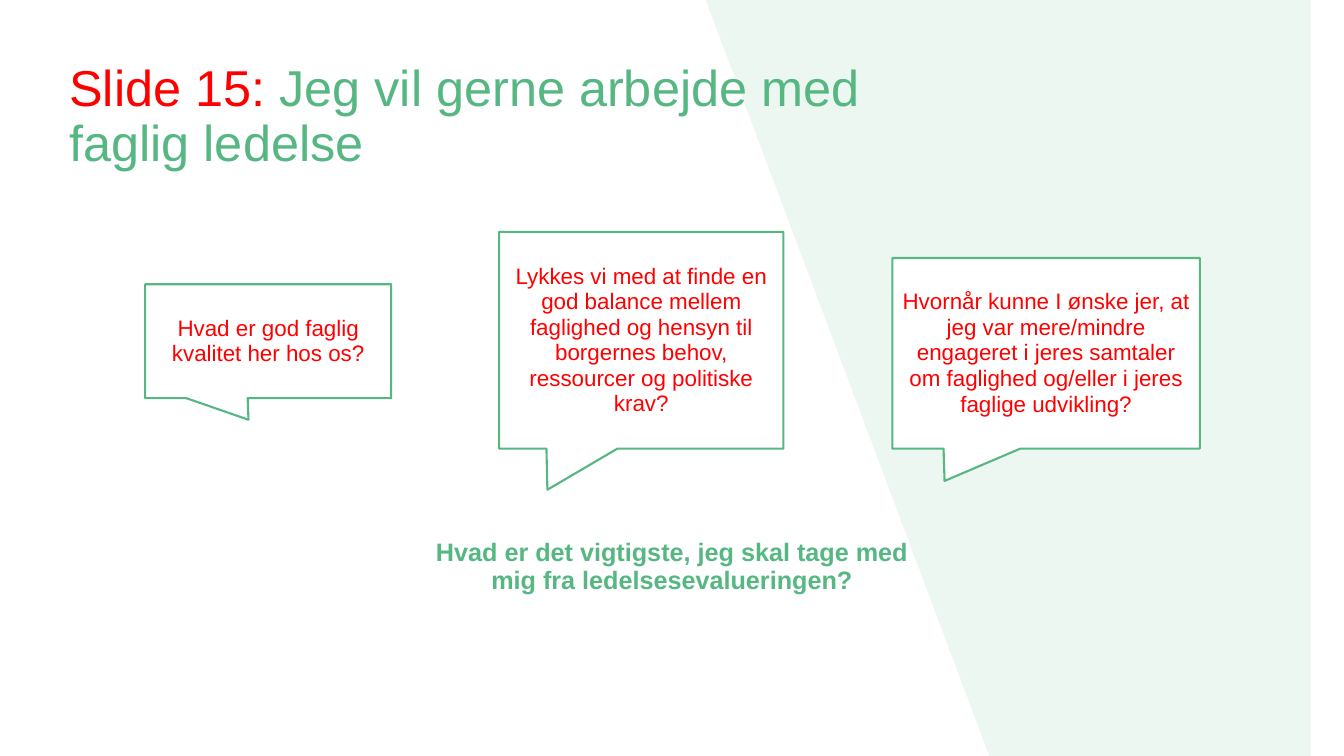
from lxml import etree
from pptx import Presentation
from pptx import util as u
from pptx.dml.color import RGBColor
from pptx.enum import shapes, text
from pptx.oxml.ns import qn

COLORS = {"green": "56B783", "red": "FF0000", "white": "FFFFFF"}
FONT = "Arial"
WIDTH, HEIGHT = 13.33, 7.5

TITLE = [("Slide 15:", "red"), (" Jeg vil gerne arbejde med faglig ledelse", "green")]
TITLE_BOX = (0.59, 0.58, 8.74, 1.11)
CLOSING = [("Hvad er det vigtigste, jeg skal tage med mig fra ledelsesevalueringen?", "green")]
CLOSING_BOX = (4.2, 5.29, 4.93, 0.68)
# Question, box, and tip offset from the box centre as shares of its size
CALLOUTS = [
    ("Hvad er god faglig kvalitet her hos os?",
     (1.44, 2.82, 2.44, 1.13), (-0.08, 0.69)),
    ("Hvornår kunne I ønske jer, at jeg var mere/mindre engageret i jeres samtaler "
     "om faglighed og/eller i jeres faglige udvikling?",
     (8.85, 2.56, 3.05, 1.89), (-0.33, 0.67)),
    ("Lykkes vi med at finde en god balance mellem faglighed og hensyn til "
     "borgernes behov, ressourcer og politiske krav?",
     (4.95, 2.3, 2.82, 2.15), (-0.33, 0.69)),
]
PANEL = [(7.22, 0), (10.08, HEIGHT), (WIDTH, HEIGHT), (WIDTH, 0)]
PANEL_OPACITY = 10


def color(name):
    return RGBColor.from_string(COLORS[name])


def inches(box):
    return [u.Inches(length) for length in box]


def write(shape, runs, size, spacing, align, anchor, bold=False):
    frame = shape.text_frame
    frame.word_wrap = True
    frame.vertical_anchor = anchor
    paragraph = frame.paragraphs[0]
    paragraph.alignment = align
    paragraph.line_spacing = spacing
    paragraph.font.name = FONT
    paragraph.font.size = u.Pt(size)
    paragraph.font.bold = bold
    for words, name in runs:
        run = paragraph.add_run()
        run.text = words
        run.font.color.rgb = color(name)
    return frame


def add_panel(slide):
    builder = slide.shapes.build_freeform(*PANEL[0], scale=u.Inches(1))
    builder.add_line_segments(PANEL[1:], close=True)
    panel = builder.convert_to_shape()
    panel.shadow.inherit = False
    panel.line.fill.background()
    panel.fill.solid()
    panel.fill.fore_color.rgb = color("green")
    fill_color = panel.fill._xPr.find(".//" + qn("a:srgbClr"))
    etree.SubElement(fill_color, qn("a:alpha"), val=str(PANEL_OPACITY * 1000))


def add_callout(slide, question, box, tip):
    callout = slide.shapes.add_shape(
        shapes.MSO_SHAPE.RECTANGULAR_CALLOUT, *inches(box))
    callout.adjustments[0], callout.adjustments[1] = tip
    callout.shadow.inherit = False
    callout.fill.solid()
    callout.fill.fore_color.rgb = color("white")
    callout.line.color.rgb = color("green")
    callout.line.width = u.Pt(1.5)
    frame = write(callout, [(question, "red")], 16, 0.95,
                  text.PP_ALIGN.CENTER, text.MSO_ANCHOR.MIDDLE)
    frame.margin_left = frame.margin_right = u.Inches(0.08)


def main():
    presentation = Presentation()
    presentation.slide_width, presentation.slide_height = inches((WIDTH, HEIGHT))
    slide = presentation.slides.add_slide(presentation.slide_layouts[6])
    add_panel(slide)
    write(slide.shapes.add_textbox(*inches(TITLE_BOX)), TITLE, 36, 0.9,
          text.PP_ALIGN.LEFT, text.MSO_ANCHOR.TOP)
    for callout in CALLOUTS:
        add_callout(slide, *callout)
    write(slide.shapes.add_textbox(*inches(CLOSING_BOX)), CLOSING, 18, 0.95,
          text.PP_ALIGN.CENTER, text.MSO_ANCHOR.TOP, bold=True)
    presentation.save("out.pptx")


if __name__ == "__main__":
    main()
